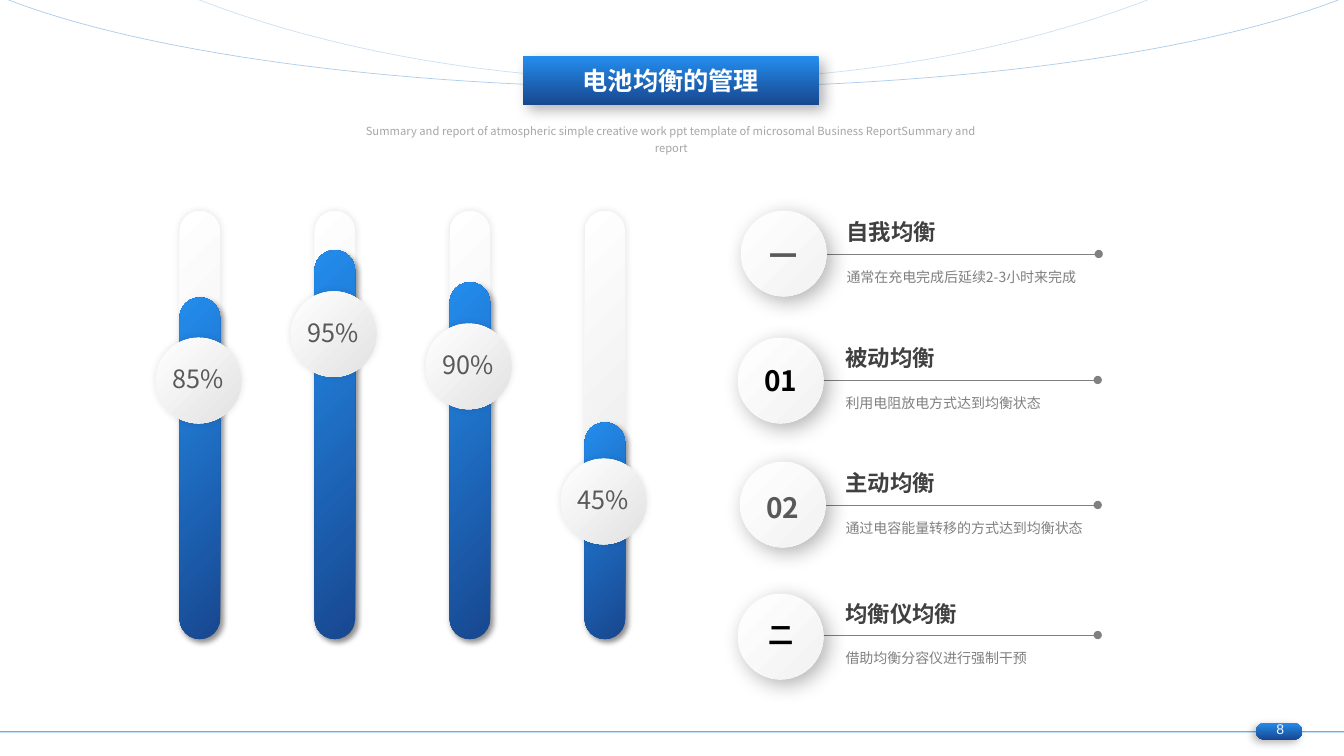
from lxml.etree import SubElement as Sub
from pptx import Presentation
from pptx.dml.color import RGBColor as Rgb
from pptx.enum.shapes import MSO_CONNECTOR as Link, MSO_SHAPE as Form
from pptx.enum.text import MSO_ANCHOR as Anchor, PP_ALIGN as Align
from pptx.oxml.ns import qn
from pptx.util import Pt

TITLE = "电池均衡的管理"
NOTE = ("Summary and report of atmospheric simple creative work ppt template "
        "of microsomal Business ReportSummary and report")
PAGE = "8"
BARS = [
    ("85%", 212.4, 241.2),
    ("95%", 178.6, 208.1),
    ("90%", 201.6, 231.1),
    ("45%", 301.7, 327.6),
]
ITEMS = [
    ("一", "自我均衡", "通常在充电完成后延续2-3小时来完成",
     575.3, 181.4, 529.2, 150.5, 167, 20, "dark"),
    ("01", "被动均衡", "利用电阻放电方式达到均衡状态",
     574.6, 271.4, 527, 241.2, 256.3, 20, "black"),
    ("02", "主动均衡", "通过电容能量转移的方式达到均衡状态",
     574.6, 360.7, 528.5, 329.8, 347, 20, "dark"),
    ("二", "均衡仪均衡", "借助均衡分容仪进行强制干预",
     574.6, 453.6, 527, 424.1, 438.8, 18, "black"),
]
ARCS = [
    (-200.2, 262.8, 112.82, 211.33, 50),
    (-502.6, 560.2, 127.02, 196.69, 30),
]
HUES = {
    "sky": "238DED", "navy": "18478F", "arc": "5B9BD5", "white": "FFFFFF",
    "pearl": "F2F2F2", "silver": "E2E2E2", "pale": "F8F8F8",
    "mist": "A6A6A6", "gray": "808080", "dark": "595959",
    "ink": "404040", "black": "000000",
}
FONT = "Noto Sans CJK SC"
SOFT = (11, 5, 0, 0)
DEEP = (40, 4, 3, 45)
LIFT = (30, 15, 5, 45)
DISC = 61.2
TOP, BASE, WIDE = 150.5, 456.5, 29
FIRST, STEP = 128.2, 96.45

deck = Presentation()
deck.slide_width, deck.slide_height = Pt(960), Pt(540)
slide = deck.slides.add_slide(deck.slide_layouts[5])
shapes = slide.shapes


def hue(name):
    return Rgb.from_string(HUES[name])


def place(x, y, w, h):
    return Pt(x), Pt(y), Pt(w), Pt(h)


def paint(shape, tones, angle, shade):
    shape.fill.gradient()
    shape.fill.gradient_angle = 360 - angle
    for stop, tone in zip(shape.fill.gradient_stops, tones):
        stop.color.rgb = hue(tone)
    shape.line.fill.background()
    shape.shadow.inherit = False
    alpha, blur, dist, turn = shade
    glow = Sub(shape._element.spPr.find(qn("a:effectLst")), qn("a:outerShdw"),
               blurRad=str(Pt(blur)), dist=str(Pt(dist)),
               dir=str(turn * 60000), algn="ctr", rotWithShape="0")
    tint = Sub(glow, qn("a:srgbClr"), val=HUES["black"])
    Sub(tint, qn("a:alpha"), val=str(alpha * 1000))


def block(form, box, tones, angle, shade):
    shape = shapes.add_shape(form, *place(*box))
    if form == Form.ROUNDED_RECTANGLE:
        shape.adjustments[0] = 0.5
    paint(shape, tones, angle, shade)
    return shape


def stroke(line, tone, width, alpha=100):
    line.color.rgb = hue(tone)
    line.width = Pt(width)
    if alpha < 100:
        tint = line._ln.find(".//" + qn("a:srgbClr"))
        Sub(tint, qn("a:alpha"), val=str(alpha * 1000))


def rule(x1, x2, y, tone, width, alpha=100):
    link = shapes.add_connector(Link.STRAIGHT, Pt(x1), Pt(y), Pt(x2), Pt(y))
    stroke(link.line, tone, width, alpha)
    Sub(link._element.spPr, qn("a:effectLst"))
    return link.line


def write(shape, text, size, tone, align=Align.CENTER, bold=False,
          space=None, font=FONT, anchor=Anchor.TOP):
    frame = shape.text_frame
    frame.word_wrap = True
    frame.vertical_anchor = anchor
    para = frame.paragraphs[0]
    para.alignment = align
    para.line_spacing = space
    run = para.add_run()
    run.text = text
    run.font.size, run.font.bold, run.font.name = Pt(size), bold, font
    run.font.color.rgb = hue(tone)
    Sub(run._r.rPr, qn("a:ea"), typeface=FONT)


def label(box, *args, **opts):
    write(shapes.add_textbox(*place(*box)), *args, **opts)


def frame_page():
    for y, h, start, end, alpha in ARCS:
        arc = shapes.add_shape(Form.ARC, *place(-76.3, y, 1114.6, h))
        arc.adjustments[0], arc.adjustments[1] = start, end
        arc.rotation = 180
        arc.fill.background()
        arc.shadow.inherit = False
        stroke(arc.line, "arc", 0.5, alpha)
    label((246.2, 82.1, 466.6, 18.7), NOTE, 8, "mist", space=1.3)
    rule(0, 960, 522.7, "sky", 1, 70)
    block(Form.ROUNDED_RECTANGLE, (897.1, 516.2, 33.1, 12.2),
          ("sky", "navy"), 90, (30, 6, 3, 135))
    label((895, 511.2, 38.9, 19.4), PAGE, 10, "pale", font="Arial")


def draw_title():
    title = shapes.title
    title.left, title.top, title.width, title.height = place(
        373.7, 40.3, 211, 34.6)
    geom = Sub(title._element.spPr, qn("a:prstGeom"), prst="roundRect")
    Sub(Sub(geom, qn("a:avLst")), qn("a:gd"), name="adj", fmla="val 50000")
    paint(title, ("sky", "navy"), 90, (30, 10, 5, 45))
    write(title, TITLE, 18, "white", bold=True, anchor=Anchor.MIDDLE)
    shapes._spTree.append(title._element)


def draw_bars():
    for i, (text, level, knob) in enumerate(BARS):
        x = FIRST + i * STEP
        block(Form.ROUNDED_RECTANGLE, (x, TOP, WIDE, BASE - TOP),
              ("white", "silver"), 45, SOFT)
        bar = block(Form.ROUNDED_RECTANGLE, (x, level, WIDE, BASE - level),
                    ("navy", "sky"), 45, DEEP)
        bar.rotation = 180
        block(Form.OVAL, (x - 17, knob, DISC, DISC),
              ("white", "silver"), 45, SOFT)
        label((x - 16, knob + 14.9, 59, 29), text, 18, "dark")


def draw_items():
    for mark, head, body, x, y, left, top, rise, size, tone in ITEMS:
        line = rule(x, x + 209.5, y, "gray", 0.5)
        for end in ("a:headEnd", "a:tailEnd"):
            Sub(line._ln, qn(end), type="oval")
        block(Form.OVAL, (left, top, DISC, DISC), ("white", "pearl"), 45, LIFT)
        label((left + 1.2, rise, 59, 31.7), mark, size, tone, bold=True)
        label((x + 22.3, y - 28.8, 164.2, 26.6), head, 16, "ink",
              Align.LEFT, bold=True)
        label((x + 22.3, y + 4.4, 269.3, 21.6), body, 10, "gray",
              Align.LEFT, space=1.2)


frame_page()
draw_bars()
draw_items()
draw_title()
deck.save("out.pptx")
